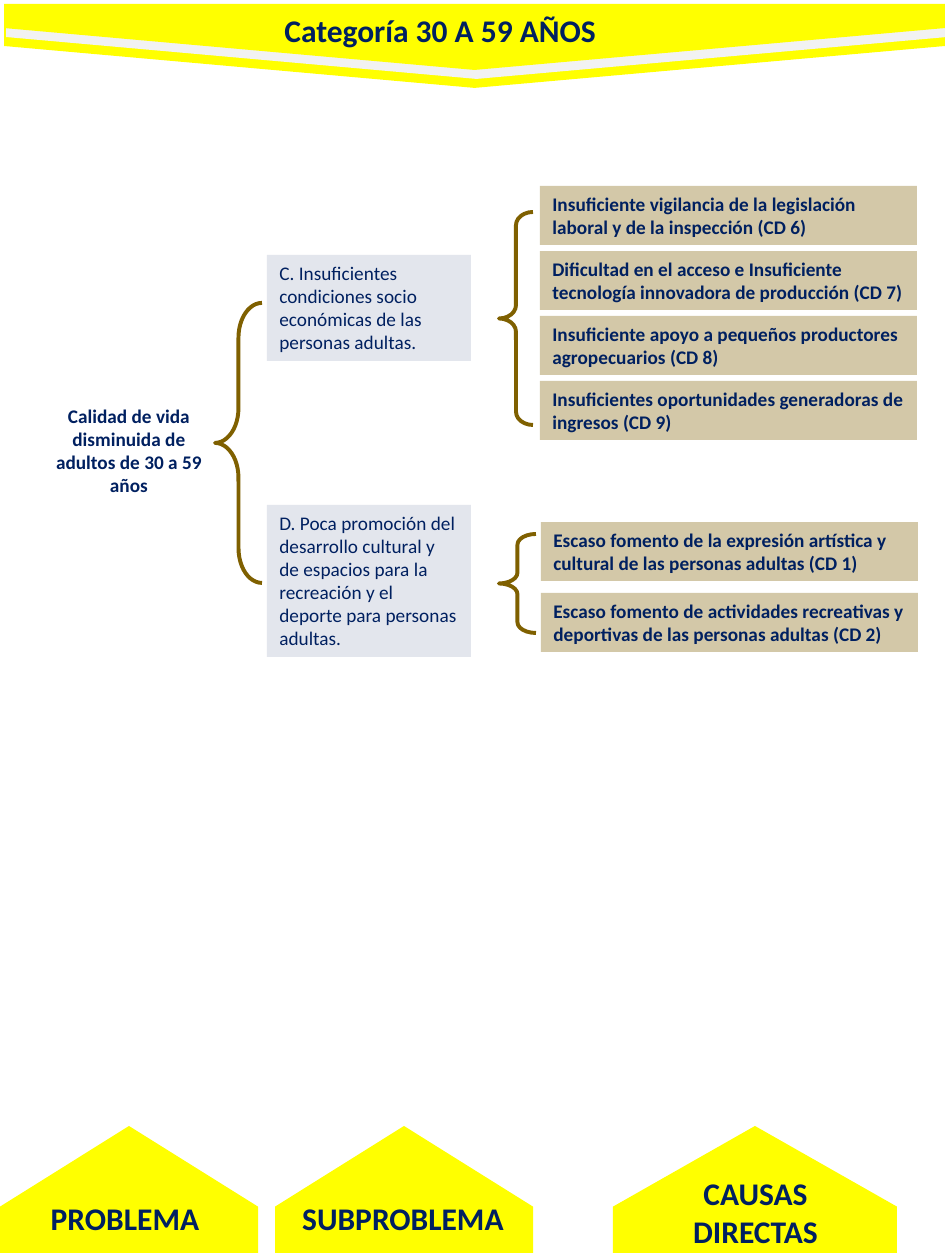
from lxml import etree
from pptx import Presentation
from pptx.dml.color import RGBColor
from pptx.enum.shapes import MSO_SHAPE
from pptx.enum.text import MSO_ANCHOR, PP_ALIGN
from pptx.oxml.ns import qn
from pptx.util import Pt

PX = 7257
RECT, ARROW, BRACE = MSO_SHAPE.RECTANGLE, MSO_SHAPE.RIGHT_ARROW, MSO_SHAPE.LEFT_BRACE
LEFT, CENTER, TOP = PP_ALIGN.LEFT, PP_ALIGN.CENTER, MSO_ANCHOR.TOP
DOWN, UP = 90, 270
COLORS = {"navy": "002060", "brown": "7F6000", "yellow": "FFFF00", "gray": "F2F2F2"}

ARROW_HEIGHT = 127
CAUSE_W, CAUSE_H = 377, 59
SUBPROBLEMS = [
    (255, 106, "C. Insuficientes condiciones socio económicas de las personas adultas."),
    (505, 152, "D. Poca promoción del desarrollo cultural y de espacios para la "
               "recreación y el deporte para personas adultas."),
]
CAUSE_GROUPS = [
    (540, 186, 65, [
        "Insuficiente vigilancia de la legislación laboral y de la inspección (CD 6)",
        "Dificultad en el acceso e Insuficiente tecnología innovadora de producción (CD 7)",
        "Insuficiente apoyo a pequeños productores agropecuarios (CD 8)",
        "Insuficientes oportunidades generadoras de ingresos (CD 9)",
    ]),
    (541, 522, 71, [
        "Escaso fomento de la expresión artística y cultural de las personas adultas (CD 1)",
        "Escaso fomento de actividades recreativas y deportivas de las personas adultas (CD 2)",
    ]),
]
BRACES = [
    (215, 303, 47, 280, 0.74, 0.5),
    (499, 212, 34, 213, 0.39, 0.5),
    (499, 534, 37, 99, 0.29, 0.5),
]
COLUMNS = [
    (0, 258, "PROBLEMA", 18, 1193, 214, 50),
    (275, 258, "SUBPROBLEMA", 282, 1193, 242, 50),
    (613, 284, "CAUSAS DIRECTAS", 664, 1168, 183, 90),
]


def px(*values):
    return [round(v * PX) for v in values]


def rgb(name):
    return RGBColor.from_string(COLORS[name])


def write(s, text, size=11, bold=False, align=LEFT):
    tf = s.text_frame
    tf.word_wrap = True
    tf.vertical_anchor = TOP
    p = tf.paragraphs[0]
    p.alignment = align
    r = p.add_run()
    r.text = text
    r.font.name = "Calibri"
    r.font.size = Pt(size)
    r.font.bold = bold
    r.font.color.rgb = rgb("navy")


def add_label(shapes, x, y, w, h, text, **fmt):
    write(shapes.add_textbox(*px(x, y, w, h)), text, **fmt)


def add_filled(shapes, kind, x, y, w, h, color):
    s = shapes.add_shape(kind, *px(x, y, w, h))
    s.shadow.inherit = False
    s.fill.solid()
    s.fill.fore_color.rgb = rgb(color)
    s.line.fill.background()
    return s


def add_box(shapes, x, y, w, h, text, color, opacity, **fmt):
    s = add_filled(shapes, RECT, x, y, w, h, color)
    clr = s.fill._xPr.find(".//" + qn("a:srgbClr"))
    etree.SubElement(clr, qn("a:alpha"), val=str(opacity * 1000))
    write(s, text, **fmt)


def add_pointer(shapes, x, y, w, h, color, rotation):
    s = add_filled(shapes, ARROW, x + (w - h) / 2, y + (h - w) / 2, h, w, color)
    s.rotation = rotation
    s.adjustments[0] = 1
    s.adjustments[1] = 0.635


def add_brace(shapes, x, y, w, h, curve, middle):
    s = shapes.add_shape(BRACE, *px(x, y, w, h))
    s.shadow.inherit = False
    s.fill.background()
    s.line.color.rgb = rgb("brown")
    s.line.width = Pt(2.25)
    s.adjustments[0] = curve
    s.adjustments[1] = middle


def main():
    prs = Presentation()
    prs.slide_width, prs.slide_height = px(945, 1260)
    shapes = prs.slides.add_slide(prs.slide_layouts[6]).shapes

    for x, y, color in [(4, 22, "yellow"), (6, 13, "gray"), (4, 4, "yellow")]:
        add_pointer(shapes, x, y, 941, 66, color, DOWN)
    add_label(shapes, 272, 5, 399, 50, "Categoría 30 A 59 AÑOS", size=18, bold=True)

    add_label(shapes, 34, 398, 190, 106,
              "Calidad de vida disminuida de adultos de 30 a 59 años",
              bold=True, align=CENTER)
    for y, h, text in SUBPROBLEMS:
        add_box(shapes, 267, y, 204, h, text, "navy", 11)
    for x, top, step, causes in CAUSE_GROUPS:
        for i, text in enumerate(causes):
            add_box(shapes, x, top + i * step, CAUSE_W, CAUSE_H, text, "brown", 34, bold=True)
    for brace in BRACES:
        add_brace(shapes, *brace)

    for x, w, text, *label in COLUMNS:
        add_pointer(shapes, x, 1126, w, ARROW_HEIGHT, "yellow", UP)
        add_label(shapes, *label, text, size=18, bold=True, align=CENTER)

    prs.save("out.pptx")


if __name__ == "__main__":
    main()
